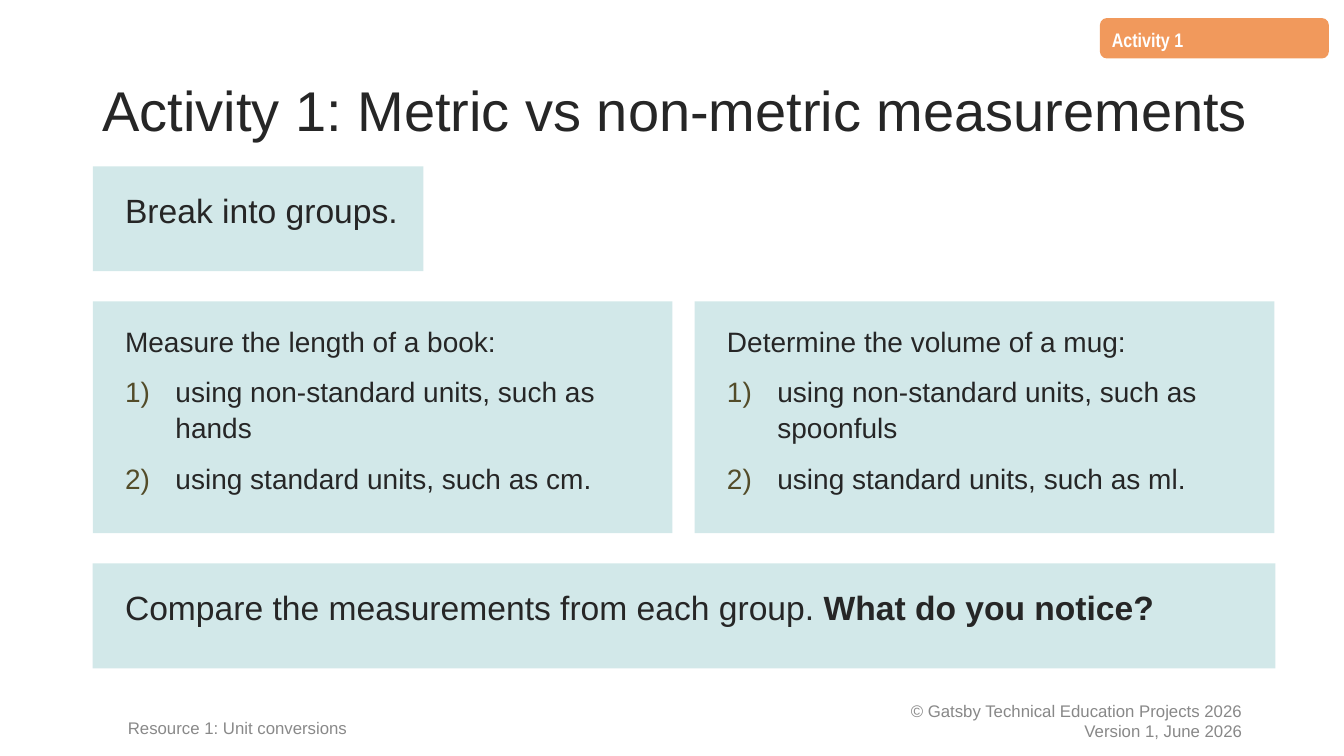
import pptx
import pptx.util
import pptx.dml.color
import pptx.enum.shapes
import pptx.enum.text
import pptx.oxml.ns
from lxml import etree

Inches, Pt = pptx.util.Inches, pptx.util.Pt
SHAPE = pptx.enum.shapes.MSO_SHAPE
ANCHOR = pptx.enum.text.MSO_ANCHOR
ALIGN = pptx.enum.text.PP_ALIGN

TITLE = "Activity 1: Metric vs non-metric measurements"
TAG = "Activity 1"
GROUPS = "Break into groups."
TASKS = [
    ("Measure the length of a book:",
     ["using non-standard units, such as hands",
      "using standard units, such as cm."]),
    ("Determine the volume of a mug:",
     ["using non-standard units, such as spoonfuls",
      "using standard units, such as ml."]),
]
COMPARE = "Compare the measurements from each group. "
QUESTION = "What do you notice?"
RESOURCE = "Resource 1: Unit conversions"
COPYRIGHT = ["© Gatsby Technical Education Projects 2026", "Version 1, June 2026"]

COLORS = {"panel": "D2E8E9", "tag": "F1995C", "text": "262626", "number": "534C29",
          "resource": "898989", "copyright": "888888", "white": "FFFFFF"}

LEFT, WIDTH = 0.92, 11.73
GAP_X, GAP_Y = 0.22, 0.3
STRIP_H, TASK_H = 1.04, 2.3
TASK_W = 5.75
GROUPS_TOP = 1.65
TASKS_TOP = GROUPS_TOP + STRIP_H + GAP_Y
COMPARE_TOP = TASKS_TOP + TASK_H + GAP_Y
FOOTER_TOP, FOOTER_H = 6.95, 0.4
BOX_INSETS = (0.1, 0.05, 0.1, 0.05)
PANEL_INSETS = (0.2, 0.2, 0.2, 0.2)

prs = pptx.Presentation()
prs.slide_width, prs.slide_height = Inches(13.33), Inches(7.5)
slide = prs.slides.add_slide(prs.slide_layouts[6])


def rgb(name):
    return pptx.dml.color.RGBColor.from_string(COLORS[name])


def set_frame(sp, insets, anchor):
    tf = sp.text_frame
    tf.word_wrap = True
    tf.vertical_anchor = anchor
    tf.margin_left, tf.margin_top, tf.margin_right, tf.margin_bottom = map(Inches, insets)
    return tf


def add_text(at, insets=BOX_INSETS, anchor=ANCHOR.MIDDLE):
    return set_frame(slide.shapes.add_textbox(*map(Inches, at)), insets, anchor)


def add_filled(kind, at, fill, insets, anchor):
    sp = slide.shapes.add_shape(kind, *map(Inches, at))
    sp.shadow.inherit = False
    sp.fill.solid()
    sp.fill.fore_color.rgb = rgb(fill)
    sp.line.fill.background()
    return set_frame(sp, insets, anchor)


def add_panel(at):
    return add_filled(SHAPE.RECTANGLE, at, "panel", PANEL_INSETS, ANCHOR.TOP)


def write(tf, lines, size, color, font="Arial", align=ALIGN.LEFT, spacing=1.0,
          before=0, left=0):
    tf.text = "\n".join(lines)
    for i, p in enumerate(tf.paragraphs):
        p.alignment = align
        p.line_spacing = spacing
        p.space_before = Pt(before if i else 0)
        indent(p, left)
        for r in p.runs:
            style(r, size, color, font)


def style(r, size, color, font="Arial", bold=False):
    r.font.size, r.font.name, r.font.bold = Pt(size), font, bold
    r.font.color.rgb = rgb(color)


def indent(p, left, first=0):
    pPr = p._p.get_or_add_pPr()
    pPr.set("marL", str(Inches(left)))
    pPr.set("indent", str(Inches(first)))
    return pPr


def number(p):
    """Turn a paragraph into an item of a 1) 2) list."""
    pPr = indent(p, 0.62, -0.5)
    qn = pptx.oxml.ns.qn
    clr = etree.SubElement(pPr, qn("a:buClr"))
    etree.SubElement(clr, qn("a:srgbClr"), val=COLORS["number"])
    etree.SubElement(pPr, qn("a:buFont"), typeface="+mj-lt")
    etree.SubElement(pPr, qn("a:buAutoNum"), type="arabicParenR")


def write_panel(tf, lines, size):
    write(tf, lines, size, "text", spacing=1.08, before=10, left=0.12)


write(add_text((LEFT, 0.4, 11.62, 1.45)), [TITLE], 40, "text", spacing=0.9)

tag = add_filled(SHAPE.FLOWCHART_ALTERNATE_PROCESS, (10.91, 0.18, 2.27, 0.4), "tag",
                 BOX_INSETS, ANCHOR.BOTTOM)
write(tag, [TAG], 14, "white", "Arial Narrow", spacing=0.88)
tag.paragraphs[0].runs[0].font.bold = True

write_panel(add_panel((LEFT, GROUPS_TOP, 3.28, STRIP_H)), [GROUPS], 24)

for col, (heading, steps) in enumerate(TASKS):
    task = add_panel((LEFT + col * (TASK_W + GAP_X), TASKS_TOP, TASK_W, TASK_H))
    write_panel(task, [heading] + steps, 20)
    for p in task.paragraphs[1:]:
        number(p)

compare = add_panel((LEFT, COMPARE_TOP, WIDTH, STRIP_H))
write_panel(compare, [COMPARE], 24)
r = compare.paragraphs[0].add_run()
r.text = QUESTION
style(r, 24, "text", bold=True)

write(add_text((LEFT, FOOTER_TOP, 4.6, FOOTER_H), (0.1, 0.17, 0.1, 0.05), ANCHOR.TOP),
      [RESOURCE], 12, "resource", left=0.25)
write(add_text((7.92, FOOTER_TOP, 4.5, FOOTER_H)), COPYRIGHT, 12, "copyright",
      align=ALIGN.RIGHT)

prs.save("out.pptx")
